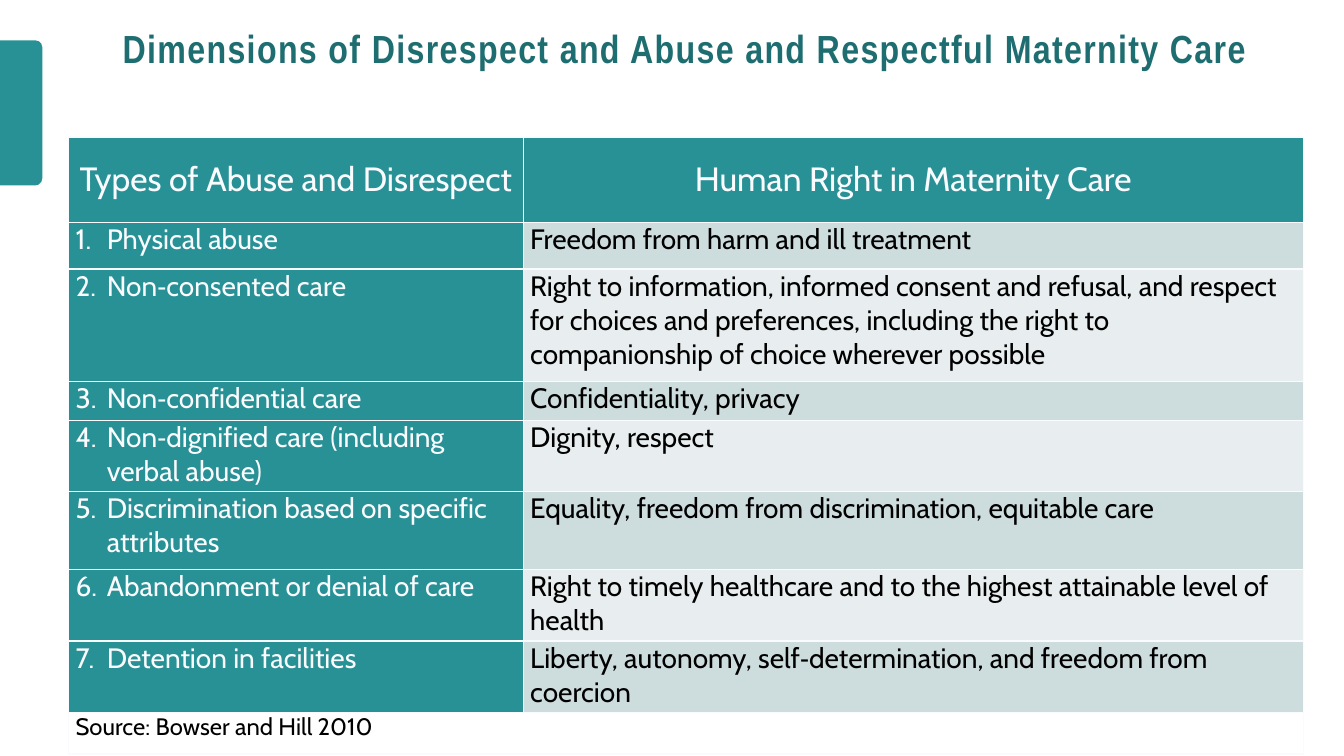
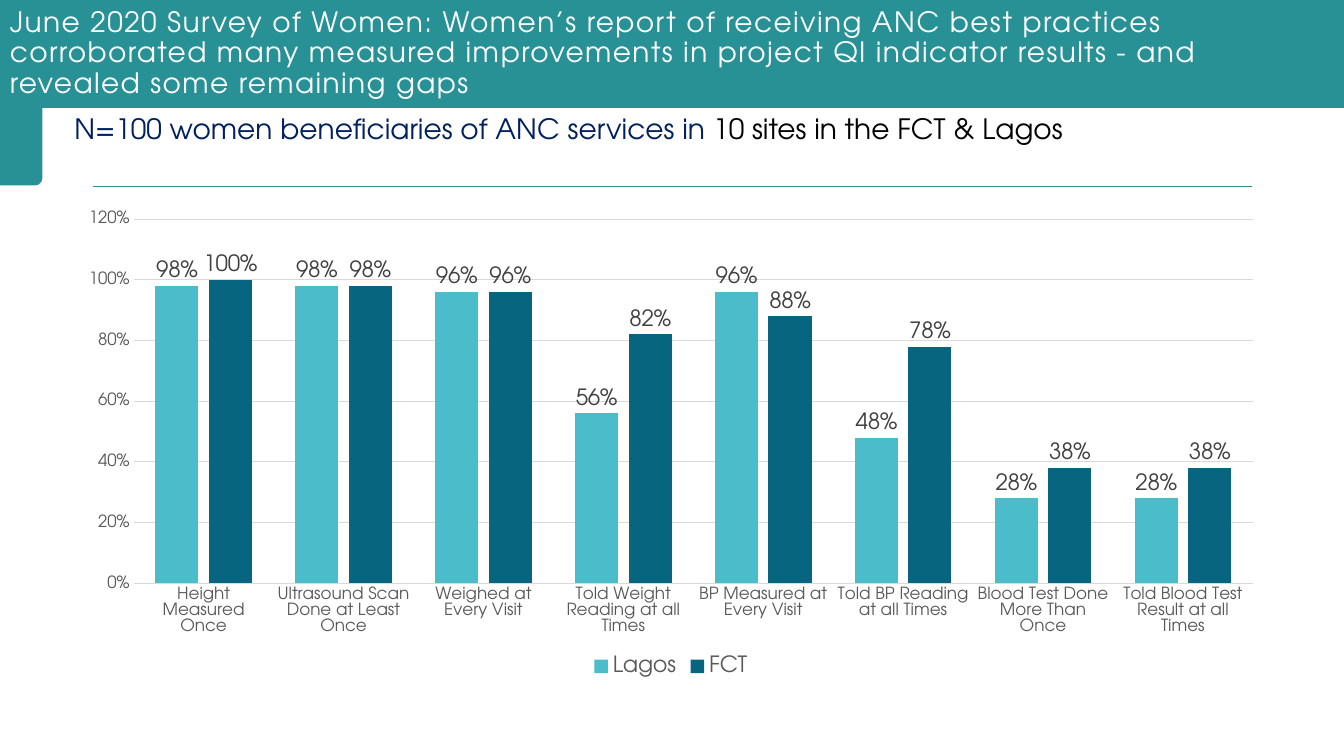
"""Build two slides on respectful maternity care: a rights table and a survey chart."""
from lxml import etree
from pptx import Presentation
from pptx import util as u
from pptx.chart.data import CategoryChartData
from pptx.dml.color import RGBColor
from pptx.enum import chart as ch, shapes, text
from pptx.oxml import ns

W, H = u.Inches(13.33), u.Inches(7.5)
TEAL = RGBColor(0x28, 0x91, 0x95)
DARK_TEAL = RGBColor(0x1E, 0x6D, 0x70)
OFF_WHITE = RGBColor(0xFA, 0xFB, 0xFF)
BLACK = RGBColor(0, 0, 0)
NAVY = RGBColor(0x00, 0x20, 0x60)
BANDS = (RGBColor(0xCD, 0xDC, 0xDD), RGBColor(0xE8, 0xEE, 0xEF))
GRID = RGBColor(0xD9, 0xD9, 0xD9)
AXIS_GREY = RGBColor(0x59, 0x59, 0x59)
LABEL_GREY = RGBColor(0x40, 0x40, 0x40)
SERIES_COLORS = (RGBColor(0x4B, 0xBC, 0xCA), RGBColor(0x08, 0x65, 0x80))
NARROW, CABIN, ADVENTOR = "Arial Narrow", "Cabin", "TeX Gyre Adventor"

HEADER = ("Types of Abuse and Disrespect", "Human Right in Maternity Care")
RIGHTS = (
    ("Physical abuse", "Freedom from harm and ill treatment", 6.13),
    ("Non‐consented care",
     "Right to information, informed consent and refusal, and respect for choices and "
     "preferences, including the right to companionship of choice wherever possible", 14.93),
    ("Non‐confidential care", "Confidentiality, privacy", 5.07),
    ("Non‐dignified care (including verbal abuse)", "Dignity, respect", 9.47),
    ("Discrimination based on specific attributes",
     "Equality, freedom from discrimination, equitable care", 10.27),
    ("Abandonment or denial of care",
     "Right to timely healthcare and to the highest attainable level of health", 9.47),
    ("Detention in facilities",
     "Liberty, autonomy, self‐determination, and freedom from coercion", 9.47),
)
SURVEY = (
    ("Height Measured Once", 0.98, 1),
    ("Ultrasound Scan Done at Least Once", 0.98, 0.98),
    ("Weighed at Every Visit", 0.96, 0.96),
    ("Told Weight Reading at all Times", 0.56, 0.82),
    ("BP Measured at Every Visit", 0.96, 0.88),
    ("Told BP Reading at all Times", 0.48, 0.78),
    ("Blood Test Done More Than Once", 0.28, 0.38),
    ("Told Blood Test Result at all Times", 0.28, 0.38),
)


def across(pct):
    return round(W * pct / 100)


def down(pct):
    return round(H * pct / 100)


def box(x, y, w, h):
    return across(x), down(y), across(w), down(h)


def style(font, name, size, color, bold=False):
    font.name, font.size, font.bold = name, u.Pt(size), bold
    font.color.rgb = color


def add_run(p, words, name, size, color, bold=False, spacing=0):
    r = p.add_run()
    r.text = words
    style(r.font, name, size, color, bold)
    if spacing:
        r.font._element.set("spc", str(spacing * 100))


def add_block(s, kind, place):
    sp = s.shapes.add_shape(kind, *place)
    sp.shadow.inherit = False
    sp.fill.solid()
    sp.fill.fore_color.rgb = TEAL
    sp.line.fill.background()
    return sp


def add_text(s, place):
    tf = s.shapes.add_textbox(*place).text_frame
    tf.word_wrap = True
    return tf


def add_title(tf, words, name, size, color, align, bold=False):
    tf.word_wrap = True
    tf.vertical_anchor = text.MSO_ANCHOR.MIDDLE
    p = tf.paragraphs[0]
    p.alignment, p.line_spacing = align, 0.9
    add_run(p, words, name, size, color, bold, spacing=1)


def add_slide(prs):
    s = prs.slides.add_slide(prs.slide_layouts[6])
    tab = add_block(s, shapes.MSO_SHAPE.ROUND_2_SAME_RECTANGLE, box(-3.83, 12.13, 10.8, 5.6))
    tab.rotation = 90
    return s


def add_rule(s):
    line = s.shapes.add_connector(shapes.MSO_CONNECTOR.STRAIGHT,
                                  across(6.9), down(24.67), across(93.15), down(24.67))
    line.line.color.rgb, line.line.width = TEAL, u.Pt(0.5)
    etree.SubElement(line._element.spPr, ns.qn("a:effectLst"))


def add_borders(cell):
    tc_pr = cell._tc.get_or_add_tcPr()
    for side in ("lnL", "lnR", "lnT", "lnB"):
        ln = etree.SubElement(tc_pr, ns.qn("a:" + side), w=str(u.Pt(1)))
        fill = etree.SubElement(ln, ns.qn("a:solidFill"))
        etree.SubElement(fill, ns.qn("a:srgbClr"), val=str(OFF_WHITE))


def fill_cell(cell, words, size, color, fill=None, heading=False, hanging=False):
    add_borders(cell)
    if fill is None:
        cell.fill.background()
    else:
        cell.fill.solid()
        cell.fill.fore_color.rgb = fill
    cell.margin_left = cell.margin_right = u.Inches(0.07)
    cell.margin_top = cell.margin_bottom = 0
    p = cell.text_frame.paragraphs[0]
    if heading:
        cell.vertical_anchor = text.MSO_ANCHOR.MIDDLE
        p.alignment = text.PP_ALIGN.CENTER
    if hanging:
        p_pr = p._p.get_or_add_pPr()
        p_pr.set("marL", str(u.Inches(0.31)))
        p_pr.set("indent", str(-u.Inches(0.31)))
    add_run(p, words, CABIN, size, color)


def add_rights_table(s):
    heights = [11.33, *(row[2] for row in RIGHTS), 5.47]
    widths = (33.83, 58.05)
    place = box(5.1, 18.13, sum(widths), sum(heights))
    table = s.shapes.add_table(len(heights), len(widths), *place).table
    table.first_row = table.horz_banding = False
    for col, width in zip(table.columns, widths):
        col.width = across(width)
    for row, height in zip(table.rows, heights):
        row.height = down(height)
    for i, words in enumerate(HEADER):
        fill_cell(table.cell(0, i), words, 24, OFF_WHITE, TEAL, heading=True)
    for n, (abuse, right, _) in enumerate(RIGHTS, 1):
        fill_cell(table.cell(n, 0), f"{n}.\t{abuse}", 20, OFF_WHITE, TEAL, hanging=True)
        fill_cell(table.cell(n, 1), right, 20, BLACK, BANDS[(n - 1) % 2])
    last = len(heights) - 1
    table.cell(last, 0).merge(table.cell(last, 1))
    fill_cell(table.cell(last, 0), "Source: Bowser and Hill 2010", 17, BLACK)


def add_survey_chart(s):
    cats, lagos, fct = zip(*SURVEY)
    data = CategoryChartData(number_format="0%")
    data.categories = cats
    data.add_series("Lagos", lagos)
    data.add_series("FCT", fct)
    chart = s.shapes.add_chart(ch.XL_CHART_TYPE.COLUMN_CLUSTERED,
                               *box(4.8, 26.67, 90.23, 63.47), data).chart
    style(chart.font, CABIN, 10, BLACK)
    chart.has_title = False
    chart.has_legend = True
    chart.legend.position = ch.XL_LEGEND_POSITION.BOTTOM
    chart.legend.include_in_layout = False
    style(chart.legend.font, ADVENTOR, 16, AXIS_GREY)

    for axis in (chart.category_axis, chart.value_axis):
        axis.major_tick_mark = axis.minor_tick_mark = ch.XL_TICK_MARK.NONE
        style(axis.tick_labels.font, ADVENTOR, 12, AXIS_GREY)
    cat_line = chart.category_axis.format.line
    cat_line.color.rgb, cat_line.width = GRID, u.Pt(1)
    val = chart.value_axis
    val.minimum_scale, val.maximum_scale, val.major_unit = 0, 1.2, 0.2
    val.tick_labels.number_format = "0%"
    val.tick_labels.number_format_is_linked = False
    val.format.line.fill.background()
    grid_line = val.major_gridlines.format.line
    grid_line.color.rgb, grid_line.width = GRID, u.Pt(0.75)

    plot = chart.plots[0]
    plot.vary_by_categories = False
    plot.gap_width, plot.overlap = 100, -24
    for series, color in zip(plot.series, SERIES_COLORS):
        series.format.fill.solid()
        series.format.fill.fore_color.rgb = color
        labels = series.data_labels
        labels.show_value = True
        labels.position = ch.XL_LABEL_POSITION.OUTSIDE_END
        labels.number_format, labels.number_format_is_linked = "0%", False
        style(labels.font, ADVENTOR, 16, LABEL_GREY)


def rights_slide(prs):
    s = add_slide(prs)
    add_title(add_text(s, box(5.03, 2.53, 91.88, 8.27)),
              "Dimensions of Disrespect and Abuse and Respectful Maternity Care",
              NARROW, 28, DARK_TEAL, text.PP_ALIGN.CENTER, bold=True)
    add_rights_table(s)


def survey_slide(prs):
    s = add_slide(prs)
    add_rule(s)
    band = add_block(s, shapes.MSO_SHAPE.RECTANGLE, box(0, 0, 100, 14.27))
    add_title(band.text_frame,
              "June 2020 Survey of Women: Women’s report of receiving ANC best practices "
              "corroborated many measured improvements in project QI indicator results - and "
              "revealed some remaining gaps",
              ADVENTOR, 20, OFF_WHITE, text.PP_ALIGN.LEFT)
    p = add_text(s, box(4.8, 14.13, 95.2, 5.87)).paragraphs[0]
    add_run(p, "N=100 women beneficiaries of ANC services in ", ADVENTOR, 20, NAVY)
    add_run(p, "10 sites in the FCT & Lagos", ADVENTOR, 20, BLACK)
    add_survey_chart(s)


def main():
    prs = Presentation()
    prs.slide_width, prs.slide_height = W, H
    rights_slide(prs)
    survey_slide(prs)
    prs.save("out.pptx")


if __name__ == "__main__":
    main()
